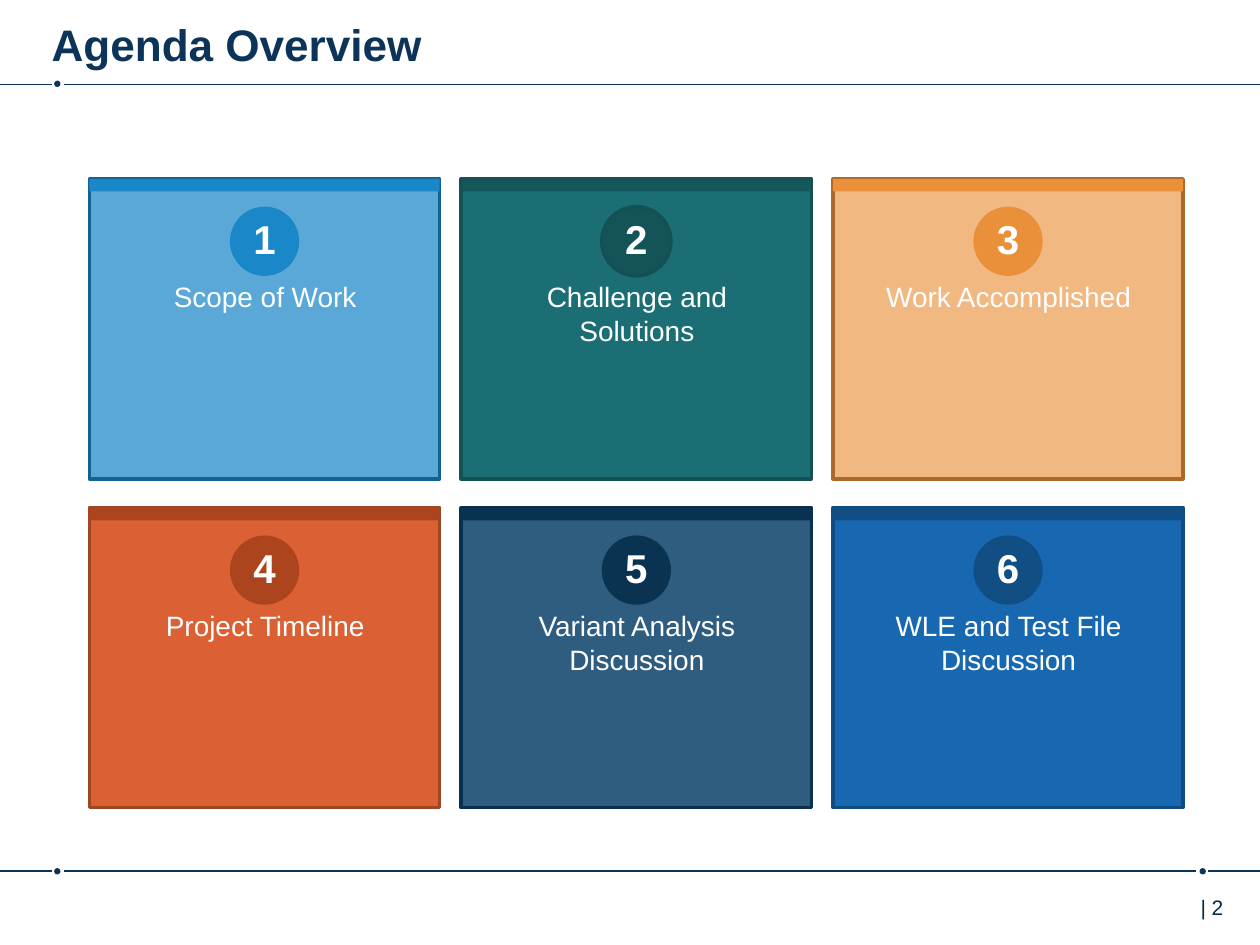
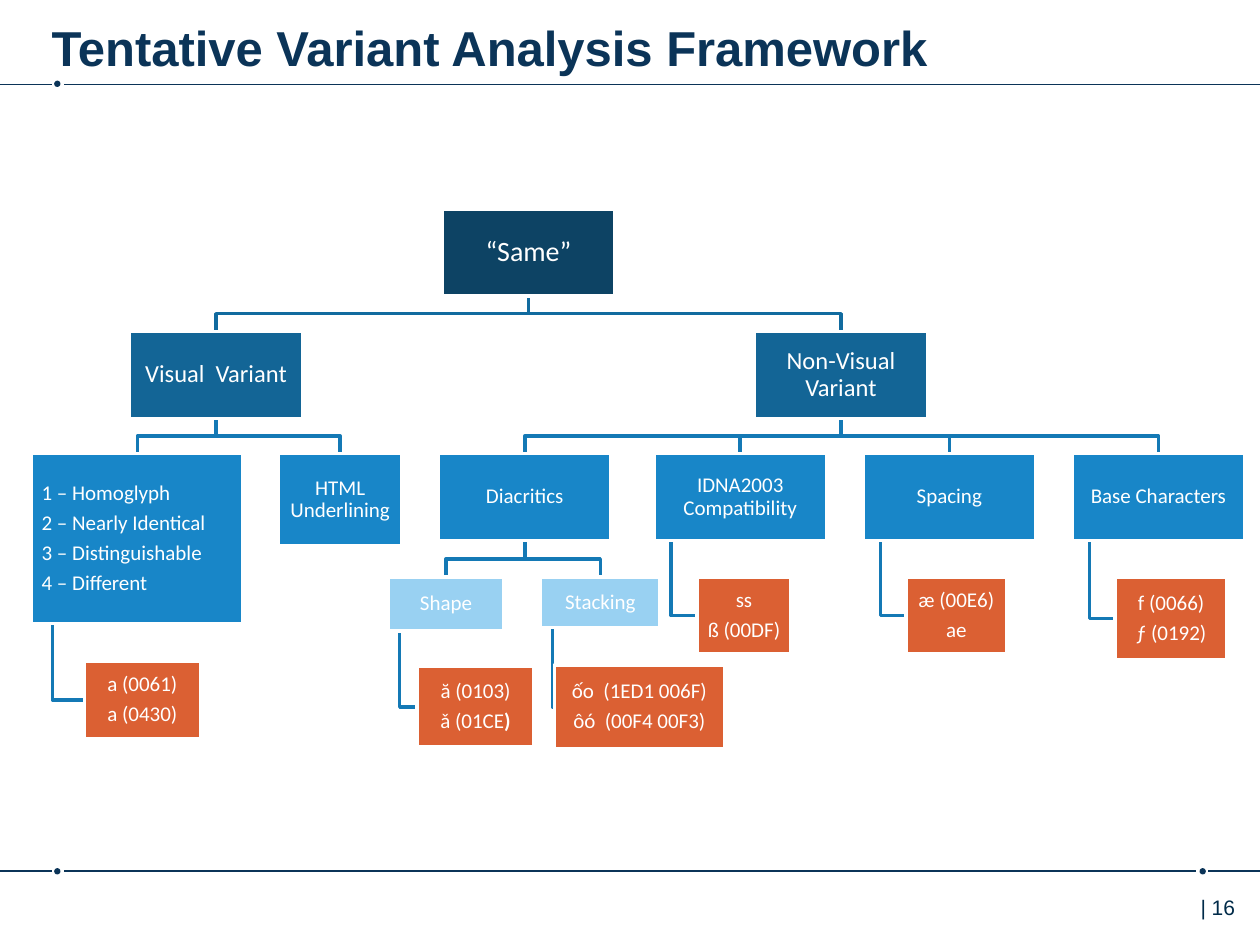
from dataclasses import dataclass

from lxml import etree
from pptx import Presentation
from pptx import util as u
from pptx.dml.color import RGBColor
from pptx.enum import shapes, text
from pptx.oxml.ns import qn

NAVY, WHITE = "0B3458", "FFFFFF"
HEADING = {"name": "Arial", "bold": True, "color": NAVY}
PAGE_NUMBER = {"name": "Arial", "size": 12, "color": "002B49"}
CARD_LABEL = {"name": "Arial", "size": 16, "color": WHITE}
CARD_NUMBER = {"name": "Arial", "size": 23, "bold": True, "color": WHITE}
CENTER = {"alignment": text.PP_ALIGN.CENTER}
NODE_PARAGRAPH = {**CENTER, "line_spacing": 0.9}
RECT, OVAL = shapes.MSO_SHAPE.RECTANGLE, shapes.MSO_SHAPE.OVAL

RULE_SEGMENTS = [(0.67, 0, 0.41), (0.67, 0.51, 10),
                 (6.91, 0, 0.41), (6.91, 0.51, 9.49), (6.91, 9.59, 10)]
RULE_DOTS = [(0.43, 0.64), (0.43, 6.89), (9.52, 6.89)]

CARD_WIDTH, CARD_HEIGHT = 2.78, 2.38
CARD_LEFT, CARD_PITCH = 0.71, 2.95
CARD_TOPS = (1.42, 4.03)
BADGE = 0.55


@dataclass
class Card:
    label: str
    fill: str
    accent: str
    border: str
    badge: str
    opacity: int = 100
    band_opacity: int = 100
    badge_border: str = None


CARDS = [
    Card("Scope of Work", "1A87C9", "1A87C9", "126292", "1A87C9", opacity=72),
    Card("Challenge and Solutions", "1B6F74", "145357", "135154", "145357",
         band_opacity=80, badge_border="135154"),
    Card("Work Accomplished", "EA903A", "EA903A", "AA692A", "EA903A", opacity=63),
    Card("Project Timeline", "DB6033", "AC441E", "9F4625", "AC441E"),
    Card("Variant Analysis Discussion", "0D436C", "093251", "09304E", "0A3251",
         opacity=86),
    Card("WLE and Test File Discussion", "1768B1", "114E85", "104B81", "114E84"),
]

LEVELS = {  # fill and text size
    "root": ("0D4364", 16),
    "branch": ("136596", 14),
    "group": ("1886C8", 12),
    "subgroup": ("99D1F2", 12),
    "example": ("DB6033", 12),
}
NODE_SIZE = (1.37, 0.69)


@dataclass
class Node:
    level: str
    left: float
    top: float
    size: tuple
    lines: list

    @property
    def center(self):
        return self.left + self.size[0] / 2

    @property
    def bottom(self):
        return self.top + self.size[1]


NODES = {
    "same": Node("root", 3.51, 1.66, NODE_SIZE, ["“Same”"]),
    "visual": Node("branch", 1.03, 2.63, NODE_SIZE, ["Visual  Variant"]),
    "non_visual": Node("branch", 5.99, 2.63, NODE_SIZE, ["Non-Visual Variant"]),
    "degrees": Node("group", 0.25, 3.6, (1.68, 1.35),
                    ["1 – Homoglyph", "2 – Nearly Identical",
                     "3 – Distinguishable", "4 – Different"]),
    "html": Node("group", 2.21, 3.6, (0.98, 0.73), ["HTML Underlining"]),
    "diacritics": Node("group", 3.48, 3.6, NODE_SIZE, ["Diacritics"]),
    "idna": Node("group", 5.19, 3.6, NODE_SIZE, ["IDNA2003 Compatibility"]),
    "spacing": Node("group", 6.85, 3.6, NODE_SIZE, ["Spacing"]),
    "base": Node("group", 8.51, 3.6, NODE_SIZE, ["Base Characters"]),
    "shape": Node("subgroup", 3.08, 4.58, (0.92, 0.43), ["Shape"]),
    "stacking": Node("subgroup", 4.29, 4.58, (0.95, 0.4), ["Stacking"]),
    "a_pair": Node("example", 0.67, 5.25, (0.92, 0.61), ["a (0061)", "а (0430)"]),
    "breve_pair": Node("example", 3.31, 5.29, (0.93, 0.64),
                       ["ă (0103)", ("ǎ (01CE", ")")]),
    "stacked_pair": Node("example", 4.4, 5.28, (1.35, 0.66),
                         ["ốo  (1ED1 006F)", "ôó  (00F4 00F3)"]),
    "ss_pair": Node("example", 5.53, 4.58, (0.75, 0.61), ["ss", "ß (00DF)"]),
    "ae_pair": Node("example", 7.19, 4.58, (0.8, 0.61), ["æ (00E6)", "ae"]),
    "f_pair": Node("example", 8.85, 4.58, (0.89, 0.66), ["f (0066)", "ƒ (0192)"]),
}
BRANCHES = {
    "visual": ["degrees", "html"],
    "non_visual": ["diacritics", "idna", "spacing", "base"],
    "diacritics": ["shape", "stacking"],
    "same": ["visual", "non_visual"],
}
EXAMPLES = {"degrees": "a_pair", "shape": "breve_pair", "stacking": "stacked_pair",
            "idna": "ss_pair", "spacing": "ae_pair", "base": "f_pair"}


def rgb(value):
    return RGBColor.from_string(value)


def inches(*values):
    return [u.Inches(value) for value in values]


def set_all(target, values):
    for name, value in values.items():
        setattr(target, name, value)


def set_font(font, style):
    for name, value in style.items():
        if name == "color":
            font.color.rgb = rgb(value)
        else:
            setattr(font, name, u.Pt(value) if name == "size" else value)


def set_frame(frame, margins=(0.1, 0.05, 0.1, 0.05), wrap=True,
              anchor=text.MSO_ANCHOR.TOP):
    sides = ("margin_left", "margin_top", "margin_right", "margin_bottom")
    set_all(frame, dict(zip(sides, inches(*margins))))
    set_all(frame, {"word_wrap": wrap, "vertical_anchor": anchor,
                    "auto_size": text.MSO_AUTO_SIZE.NONE})


def write(frame, lines, style, paragraph_format=None, gap=0):
    """Write one paragraph per line; the second part of a tuple is bold."""
    for index, line in enumerate(lines):
        paragraph = frame.paragraphs[0] if index == 0 else frame.add_paragraph()
        set_all(paragraph, paragraph_format or {})
        if index and gap:
            paragraph.space_before = u.Pt(gap)
        plain, *strong = (line,) if isinstance(line, str) else line
        for part, extra in [(plain, {})] + [(s, {"bold": True}) for s in strong]:
            run = paragraph.add_run()
            run.text = part
            set_font(run.font, {**style, **extra})


def add_block(slide, kind, box, fill, border=None, opacity=100):
    block = slide.shapes.add_shape(kind, *inches(*box))
    block.shadow.inherit = False
    block.fill.solid()
    block.fill.fore_color.rgb = rgb(fill)
    if opacity < 100:
        color = block.fill._xPr.find(qn("a:solidFill"))[0]
        etree.SubElement(color, qn("a:alpha")).set("val", str(opacity * 1000))
    if border:
        block.line.color.rgb = rgb(border)
        block.line.width = u.Pt(2)
    else:
        block.line.fill.background()
    return block


def add_text(slide, box, line, style, paragraph_format=None, **frame_format):
    frame = slide.shapes.add_textbox(*inches(*box)).text_frame
    set_frame(frame, **frame_format)
    write(frame, [line], style, paragraph_format)


def add_rule(slide, y, start, end):
    rule = slide.shapes.add_connector(shapes.MSO_CONNECTOR.STRAIGHT,
                                      *inches(start, y, end, y))
    rule.line.color.rgb = rgb(NAVY)
    rule.line.width = u.Pt(1)
    etree.SubElement(rule._element.spPr, qn("a:effectLst"))


def add_slide(deck, heading, heading_size, page):
    """Start a slide with its title, rules and page number."""
    slide = deck.slides.add_slide(deck.slide_layouts[5])
    for segment in RULE_SEGMENTS:
        add_rule(slide, *segment)
    for left, top in RULE_DOTS:
        add_block(slide, OVAL, (left, top, 0.05, 0.05), NAVY)
    add_text(slide, (9.43, 7.05, 0.57, 0.4), f"| {page}", PAGE_NUMBER, wrap=False)
    title = slide.shapes.title
    set_all(title, dict(zip(("left", "top", "width", "height"),
                            inches(0.41, 0.05, 8.76, 0.49))))
    set_frame(title.text_frame, margins=(0, 0.09, 0, 0.05))
    write(title.text_frame, [heading], {**HEADING, "size": heading_size},
          {"alignment": text.PP_ALIGN.LEFT})
    return slide


def add_card(slide, index, card):
    row, column = divmod(index, 3)
    left, top = CARD_LEFT + column * CARD_PITCH, CARD_TOPS[row]
    add_block(slide, RECT, (left, top, CARD_WIDTH, CARD_HEIGHT), card.fill,
              card.border, card.opacity)
    add_block(slide, RECT, (left, top, CARD_WIDTH, 0.1), card.accent,
              opacity=card.band_opacity)
    badge = add_block(slide, OVAL,
                      (left + (CARD_WIDTH - BADGE) / 2, top + 0.22, BADGE, BADGE),
                      card.badge, card.badge_border)
    set_frame(badge.text_frame, margins=(0, 0, 0, 0.04), wrap=False,
              anchor=text.MSO_ANCHOR.MIDDLE)
    write(badge.text_frame, [str(index + 1)], CARD_NUMBER, CENTER)
    add_text(slide, (left + 0.26, top + 0.75, 2.27, 1.18), card.label,
             CARD_LABEL, CENTER)


def add_link(slide, points, color):
    (start, *rest) = [tuple(inches(*point)) for point in points]
    builder = slide.shapes.build_freeform(*start)
    builder.add_line_segments(rest, close=False)
    link = builder.convert_to_shape()
    link.shadow.inherit = False
    link.fill.background()
    link.line.color.rgb = rgb(color)
    link.line.width = u.Pt(2)


def add_branch(slide, parent, child):
    """Link the bottom of a parent to the top of a child."""
    middle = (parent.bottom + child.top) / 2
    add_link(slide, [(parent.center, parent.bottom), (parent.center, middle),
                     (child.center, middle), (child.center, child.top)],
             "116B9F" if parent.level == "root" else "1479B5")


def add_hanger(slide, parent, child):
    """Link a parent down to the left side of its example."""
    x = parent.left + parent.size[0] / 10
    y = child.top + child.size[1] / 2
    add_link(slide, [(x, parent.bottom), (x, y), (child.left, y)], "1479B5")


def add_node(slide, node):
    fill, size = LEVELS[node.level]
    block = add_block(slide, RECT, (node.left, node.top, *node.size), fill, WHITE)
    is_list = len(node.lines) > 2
    set_frame(block.text_frame, margins=(0.08 if is_list else 0.01, 0.01, 0.01, 0.01),
              anchor=text.MSO_ANCHOR.MIDDLE)
    alignment = text.PP_ALIGN.LEFT if is_list else text.PP_ALIGN.CENTER
    write(block.text_frame, node.lines,
          {"name": "Calibri", "size": size, "color": WHITE},
          {**NODE_PARAGRAPH, "alignment": alignment}, gap=4.2)


def main():
    deck = Presentation()
    deck.slide_width, deck.slide_height = inches(10, 7.5)

    agenda = add_slide(deck, "Agenda Overview", 25.2, 2)
    for index, card in enumerate(CARDS):
        add_card(agenda, index, card)

    framework = add_slide(deck, "Tentative Variant Analysis Framework", 28, 16)
    for parent, children in BRANCHES.items():
        for child in children:
            add_branch(framework, NODES[parent], NODES[child])
    for parent, example in EXAMPLES.items():
        add_hanger(framework, NODES[parent], NODES[example])
    for node in NODES.values():
        add_node(framework, node)

    deck.save("out.pptx")


if __name__ == "__main__":
    main()
